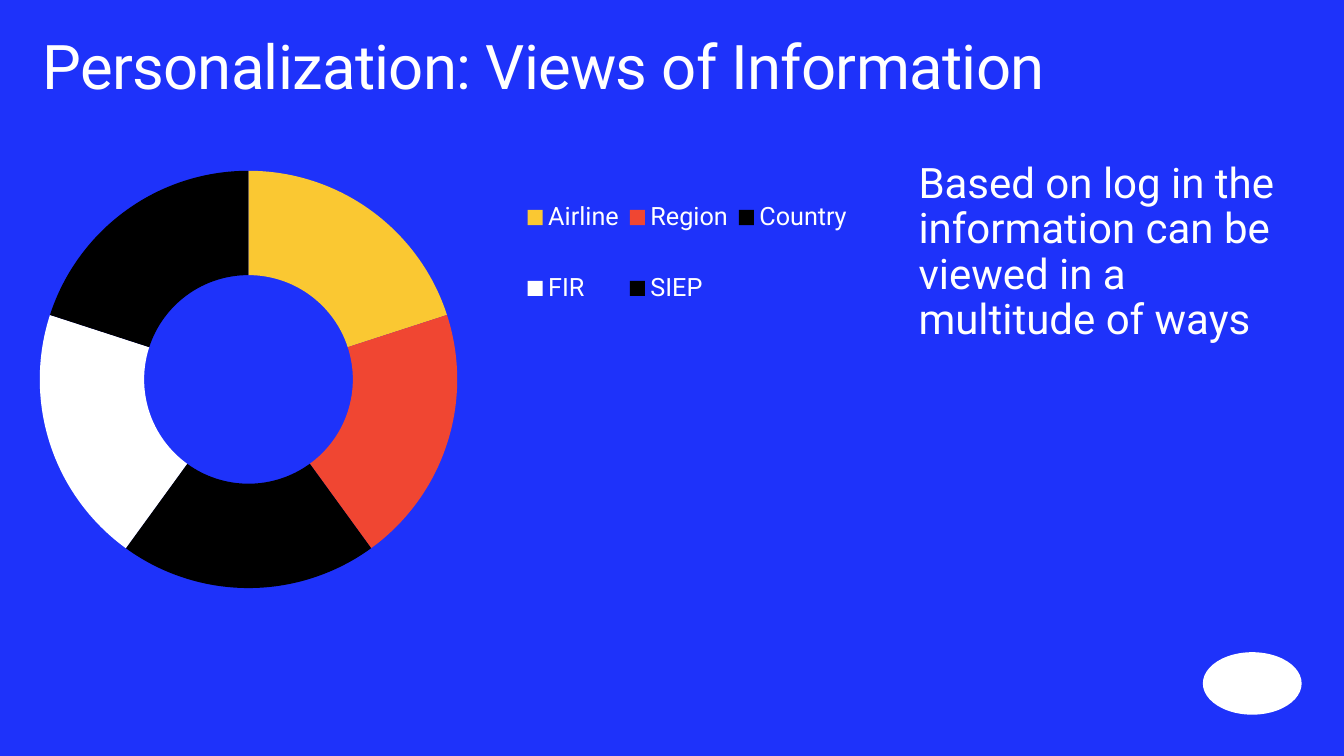
from lxml import etree
from pptx import Presentation
from pptx.chart.data import CategoryChartData
from pptx.dml.color import RGBColor
from pptx.enum.chart import XL_CHART_TYPE, XL_LEGEND_POSITION
from pptx.enum.shapes import MSO_SHAPE
from pptx.enum.text import MSO_ANCHOR, MSO_AUTO_SIZE, PP_ALIGN
from pptx.oxml.ns import qn
from pptx.util import Inches, Pt

FONT = "Roboto"
BLUE, WHITE, BLACK = "1E32FA", "FFFFFF", "000000"
VIEWS = {"Airline": "FAC832", "Region": "F04632", "Country": BLACK, "FIR": WHITE, "SIEP": BLACK}


def paint(fill, color):
    """Give a fill one solid colour."""
    fill.solid()
    fill.fore_color.rgb = RGBColor.from_string(color)


def style_font(font, size, color):
    """Set typeface, size and colour of a font."""
    font.name = FONT
    font.size = Pt(size)
    font.color.rgb = RGBColor.from_string(color)


def place(shape, left, top, width, height):
    """Move and size a shape, in inches."""
    shape.left, shape.top = Inches(left), Inches(top)
    shape.width, shape.height = Inches(width), Inches(height)


def write(shape, text, size):
    """Write one white paragraph into a frame without margins."""
    frame = shape.text_frame
    frame.word_wrap = True
    frame.auto_size = MSO_AUTO_SIZE.NONE
    frame.vertical_anchor = MSO_ANCHOR.TOP
    frame.margin_left = frame.margin_right = frame.margin_top = frame.margin_bottom = 0
    paragraph = frame.paragraphs[0]
    paragraph.alignment = PP_ALIGN.LEFT
    paragraph.line_spacing = 0.9
    paragraph.space_before = Pt(0)
    run = paragraph.add_run()
    run.text = text
    style_font(run.font, size, WHITE)
    return run


def set_layout(parent, x, y, w, h, inner=False):
    """Fix the place of a chart part as fractions of the chart."""
    for old in parent.findall(qn("c:layout")):
        parent.remove(old)
    layout = etree.Element(qn("c:layout"))
    manual = etree.SubElement(layout, qn("c:manualLayout"))
    settings = [("layoutTarget", "inner")] if inner else []
    settings += [("xMode", "edge"), ("yMode", "edge"), ("x", x), ("y", y), ("w", w), ("h", h)]
    for name, value in settings:
        etree.SubElement(manual, qn(f"c:{name}")).set("val", str(value))
    position = parent.find(qn("c:legendPos"))
    parent.insert(0 if position is None else parent.index(position) + 1, layout)


def add_views_doughnut(slide):
    """Add the doughnut of equal views with its legend."""
    data = CategoryChartData()
    data.categories = list(VIEWS)
    data.add_series("Series 1", [20] * len(VIEWS))
    chart = slide.shapes.add_chart(
        XL_CHART_TYPE.DOUGHNUT, Inches(0.31), Inches(1.6), Inches(8.45), Inches(4.33), data
    ).chart
    style_font(chart.font, 10, BLACK)
    chart.has_title = False
    chart.has_legend = True
    chart.legend.position = XL_LEGEND_POSITION.RIGHT
    chart.legend.include_in_layout = False
    style_font(chart.legend.font, 18, WHITE)
    plot = chart.plots[0]
    plot.vary_by_categories = True
    for index, color in enumerate(VIEWS.values()):
        sector = plot.series[0].points[index].format
        paint(sector.fill, color)
        sector.line.fill.background()
    root = chart.element
    root.find(f".//{qn('c:holeSize')}").set("val", "65")
    set_layout(root.find(f".//{qn('c:plotArea')}"), 0.01, 0.02, 0.49, 0.96, inner=True)
    set_layout(root.find(f".//{qn('c:legend')}"), 0.57, 0, 0.4, 0.42)


def add_emblem(slide):
    """Add a plain white oval in the bottom right corner."""
    emblem = slide.shapes.add_shape(
        MSO_SHAPE.OVAL, Inches(11.93), Inches(6.47), Inches(0.98), Inches(0.62)
    )
    emblem.shadow.inherit = False
    paint(emblem.fill, WHITE)
    emblem.line.fill.background()


def main():
    """Build and save the slide."""
    deck = Presentation()
    deck.slide_width, deck.slide_height = Inches(13.33), Inches(7.5)
    slide = deck.slides.add_slide(deck.slide_layouts[5])
    paint(slide.background.fill, BLUE)
    add_emblem(slide)
    title = slide.shapes.title
    place(title, 0.42, 0.36, 12.48, 0.79)
    heading = write(title, "Personalization: Views of Information", 44)
    heading.font._element.set("spc", "-50")
    add_views_doughnut(slide)
    message = slide.shapes.add_textbox(Inches(9.11), Inches(1.61), Inches(3.78), Inches(3.54))
    write(message, "Based on log in the information can be viewed in a multitude of ways", 30)
    deck.save("out.pptx")


if __name__ == "__main__":
    main()
